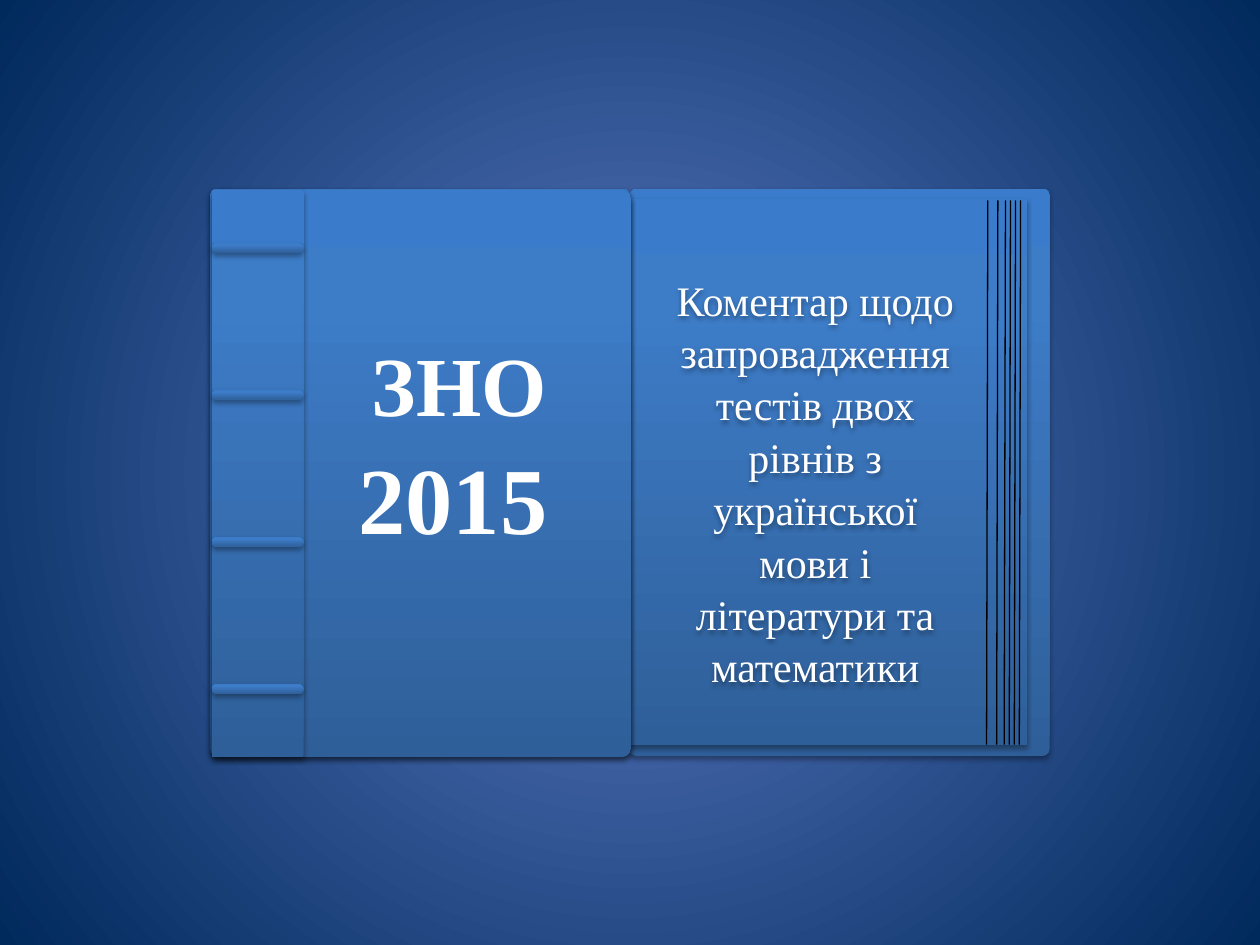
from typing import NamedTuple

from pptx import Presentation, oxml
from pptx.dml.color import RGBColor
from pptx.enum import shapes, text
from pptx.oxml import ns
from pptx.util import Inches, Pt

WHITE = RGBColor(0xFF, 0xFF, 0xFF)
BLACK = RGBColor(0x00, 0x00, 0x00)
BACKDROP_CENTRE = RGBColor(0x5E, 0x7C, 0xC5)
BACKDROP_EDGE = RGBColor(0x00, 0x29, 0x5C)
COVER_DARK = RGBColor(0x2F, 0x5F, 0x99)
COVER_MID = RGBColor(0x3D, 0x7C, 0xC7)
COVER_LIGHT = RGBColor(0x3A, 0x7C, 0xCB)
COVER_STOPS = [(0, COVER_DARK), (80, COVER_MID), (100, COVER_LIGHT)]
FONT = "Times New Roman"
NS = ns.nsdecls("a", "p")


class Panel(NamedTuple):
    left: float
    top: float
    width: float
    height: float
    corner: float = 0  # 0 gives square corners


class Run(NamedTuple):
    text: str
    size: float


def gradient_xml(stops: list, direction: str) -> str:
    items = "".join(f'<a:gs pos="{pos * 1000}"><a:srgbClr val="{color}"/></a:gs>'
                    for pos, color in stops)
    return f'<a:gradFill {NS} rotWithShape="1"><a:gsLst>{items}</a:gsLst>{direction}</a:gradFill>'


def add_shadow(sp) -> None:
    sp.shadow.inherit = False
    effects = sp.element.spPr.find(ns.qn("a:effectLst"))
    effects.append(oxml.parse_xml(
        f'<a:outerShdw {NS} blurRad="{Pt(3.1)}" dist="{Pt(1.8)}" dir="5400000" rotWithShape="0">'
        f'<a:srgbClr val="{BLACK}"><a:alpha val="35000"/></a:srgbClr></a:outerShdw>'))


def add_panel(s, panel: Panel) -> None:
    kind = shapes.MSO_SHAPE.ROUNDED_RECTANGLE if panel.corner else shapes.MSO_SHAPE.RECTANGLE
    sp = s.shapes.add_shape(kind, *map(Inches, panel[:4]))
    if panel.corner:
        sp.adjustments[0] = panel.corner
    sp.element.spPr.append(oxml.parse_xml(
        gradient_xml(COVER_STOPS, '<a:lin ang="16200000" scaled="0"/>')))
    sp.line.fill.background()
    add_shadow(sp)


def add_page_edge(s, x: float) -> None:
    line = s.shapes.add_connector(shapes.MSO_CONNECTOR.STRAIGHT, Inches(x), Inches(1.59),
                                  Inches(x - 0.01), Inches(5.91))
    line.line.color.rgb = BLACK
    line.line.width = Pt(0.75)
    line.element.spPr.append(oxml.parse_xml(f"<a:effectLst {NS}/>"))


def add_text(s, box: tuple, lines: list[list[Run]], spacing: float, bold: bool, frame: dict):
    sp = s.shapes.add_textbox(*map(Inches, box))
    tf = sp.text_frame
    for name, value in {"word_wrap": True, **frame}.items():
        setattr(tf, name, value)
    p = tf.paragraphs[0]
    p.alignment = text.PP_ALIGN.CENTER
    p.line_spacing = spacing
    for i, line in enumerate(lines):
        if i:
            p.add_line_break()
        for run in line:
            r = p.add_run()
            r.text = run.text
            for name, value in {"name": FONT, "size": Pt(run.size), "bold": bold}.items():
                setattr(r.font, name, value)
            r.font.color.rgb = WHITE
    return sp


def main() -> None:
    prs = Presentation()
    prs.slide_width, prs.slide_height = Inches(10), Inches(7.5)
    s = prs.slides.add_slide(prs.slide_layouts[6])

    # Backdrop
    centre = ('<a:path path="circle"><a:fillToRect l="50000" t="50000" r="50000" b="50000"/>'
              '</a:path>')
    backdrop = gradient_xml([(0, BACKDROP_CENTRE), (100, BACKDROP_EDGE)], centre)
    s.element.cSld.insert(0, oxml.parse_xml(
        f"<p:bg {NS}><p:bgPr>{backdrop}<a:effectLst/></p:bgPr></p:bg>"))

    # Right half: back cover, pages, comment and page edges
    add_panel(s, Panel(5, 1.5, 3.33, 4.5, 0.016))
    add_panel(s, Panel(5, 1.58, 3.15, 4.33))
    comment = "Коментар щодо запровадження тестів двох рівнів з української мови і літератури та математики"
    sp = add_text(s, (5.21, 1.7, 2.52, 3.74), [[Run(comment, 24)]], 1.045, False,
                  {"margin_top": Inches(0.46)})
    add_shadow(sp)
    for x in (7.84, 7.92, 7.98, 8.02, 8.06, 8.1):
        add_page_edge(s, x)

    # Left half: inner cover, pages, front cover and spine
    for panel in (Panel(1.67, 1.5, 3.33, 4.5, 0.016), Panel(1.85, 1.58, 3.15, 4.33),
                  Panel(1.68, 1.51, 3.33, 4.5, 0.022), Panel(1.68, 1.51, 0.73, 4.5, 0.022)):
        add_panel(s, panel)

    # Spine bands
    for i in range(4):
        add_panel(s, Panel(1.68, 1.93 + i * 3.5 / 3, 0.73, 0.08, 0.5))

    # Title
    add_text(s, (2.15, 2.75, 2.99, 1.48), [[Run("ЗНО", 48)], [Run(" ", 24), Run("2015 ", 54)]],
             1.06, True, {"vertical_anchor": text.MSO_ANCHOR.MIDDLE})

    prs.save("out.pptx")


if __name__ == "__main__":
    main()
